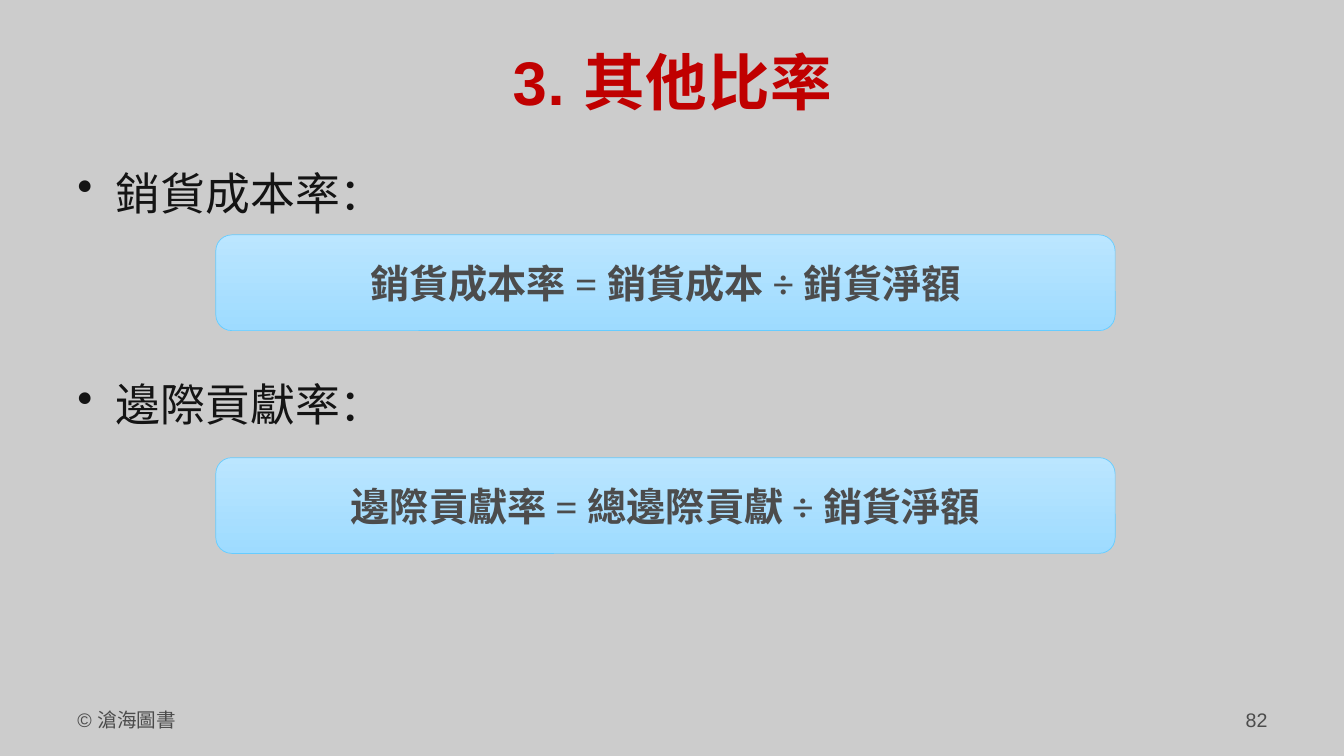
from pptx import Presentation
from pptx.dml.color import RGBColor
from pptx.enum.shapes import MSO_SHAPE
from pptx.enum.text import MSO_ANCHOR, PP_ALIGN
from pptx.oxml import parse_xml
from pptx.oxml.ns import nsdecls
from pptx.util import Inches, Pt

LEFT, CENTER, RIGHT = PP_ALIGN.LEFT, PP_ALIGN.CENTER, PP_ALIGN.RIGHT
TOP, MIDDLE = MSO_ANCHOR.TOP, MSO_ANCHOR.MIDDLE
ROUNDED = MSO_SHAPE.ROUNDED_RECTANGLE
COLORS = {
    "background": "CCCCCC",
    "title": "C00000",
    "body": "141414",
    "gray": "4C4C4C",
    "panel_top": "BBE6FF",
    "panel_bottom": "9EDBFF",
    "panel_line": "66CCFF",
}


def color(name):
    return RGBColor.from_string(COLORS[name])


def write(box, text, size=14, ink="gray", font="Arial", bold=False,
          align=LEFT, anchor=TOP, bullet=False, spacing=0):
    frame = box.text_frame
    frame.word_wrap = True
    frame.vertical_anchor = anchor
    para = frame.paragraphs[0]
    para.alignment = align
    if bullet:
        properties = para._p.get_or_add_pPr()
        properties.set("marL", str(Inches(0.38)))
        properties.set("indent", str(Inches(-0.38)))
        properties.append(parse_xml(f'<a:buChar {nsdecls("a")} char="•"/>'))
    span = para.add_run()
    span.text = text
    span.font.name = font
    span.font.size = Pt(size)
    span.font.bold = bold
    span.font.color.rgb = color(ink)
    if spacing:
        span.font._element.set("spc", str(spacing))


deck = Presentation()
deck.slide_width = Inches(13.33)
deck.slide_height = Inches(7.5)
page = deck.slides.add_slide(deck.slide_layouts[5])
page.background.fill.solid()
page.background.fill.fore_color.rgb = color("background")

title = page.shapes.title
title.left, title.top = Inches(0.67), Inches(0.25)
title.width, title.height = Inches(12), Inches(1.1)
write(title, "3. 其他比率", size=44, ink="title", bold=True,
      align=CENTER, anchor=MIDDLE, spacing=50)

ratios = [
    ("銷貨成本率：", 1.59, "銷貨成本率 = 銷貨成本 ÷ 銷貨淨額", 2.33),
    ("邊際貢獻率：", 3.69, "邊際貢獻率 = 總邊際貢獻 ÷ 銷貨淨額", 4.54),
]
for label, label_top, formula, panel_top in ratios:
    heading = page.shapes.add_textbox(
        Inches(0.67), Inches(label_top), Inches(12), Inches(0.74))
    write(heading, label, size=32, ink="body", bullet=True)

    panel = page.shapes.add_shape(
        ROUNDED, Inches(2.14), Inches(panel_top), Inches(8.92), Inches(0.95))
    panel.shadow.inherit = False
    panel.fill.gradient()
    panel.fill.gradient_angle = 270
    for stop, name in zip(panel.fill.gradient_stops, ("panel_top", "panel_bottom")):
        stop.color.rgb = color(name)
    panel.line.color.rgb = color("panel_line")
    panel.line.width = Pt(0.5)
    write(panel, formula, size=28, font="Times New Roman", bold=True,
          align=CENTER, anchor=MIDDLE)

for text, left, align in [("© 滄海圖書", 0.67, LEFT), ("82", 9.56, RIGHT)]:
    footer = page.shapes.add_textbox(
        Inches(left), Inches(6.97), Inches(3.11), Inches(0.52))
    write(footer, text, align=align)

deck.save("out.pptx")
